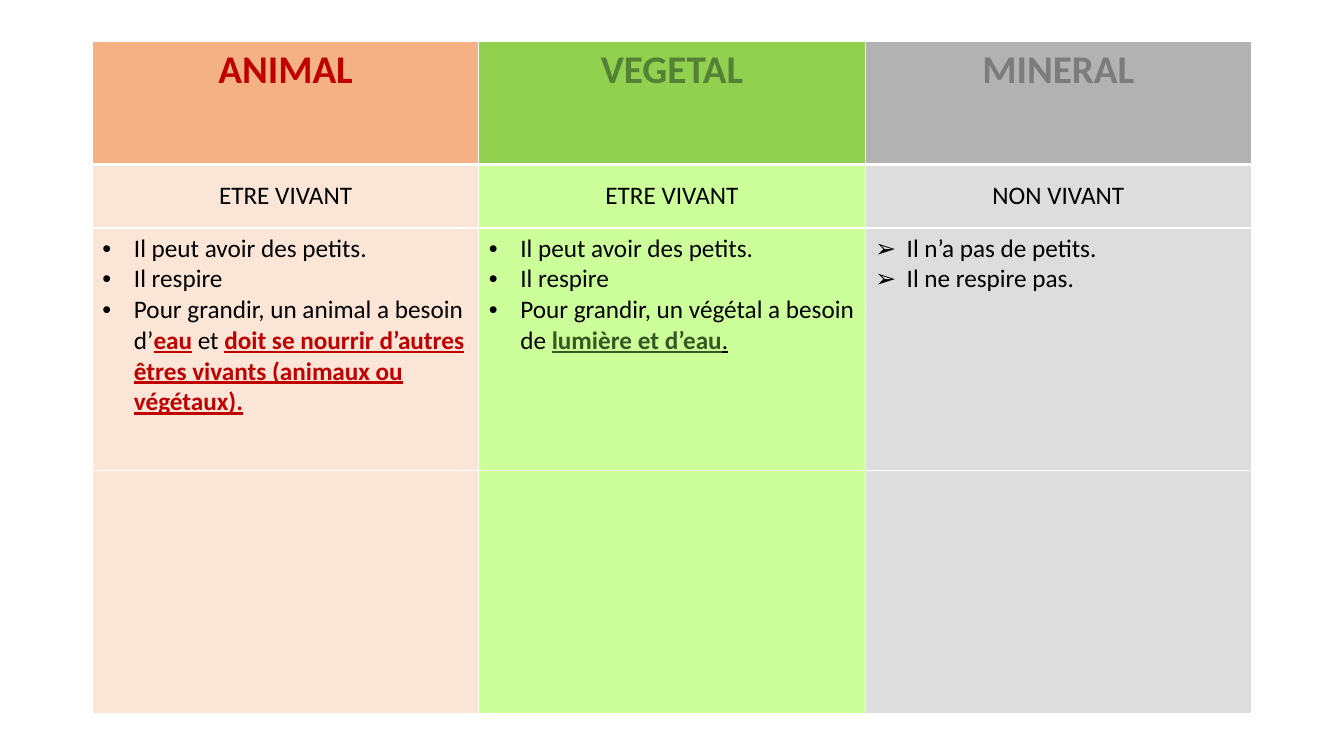
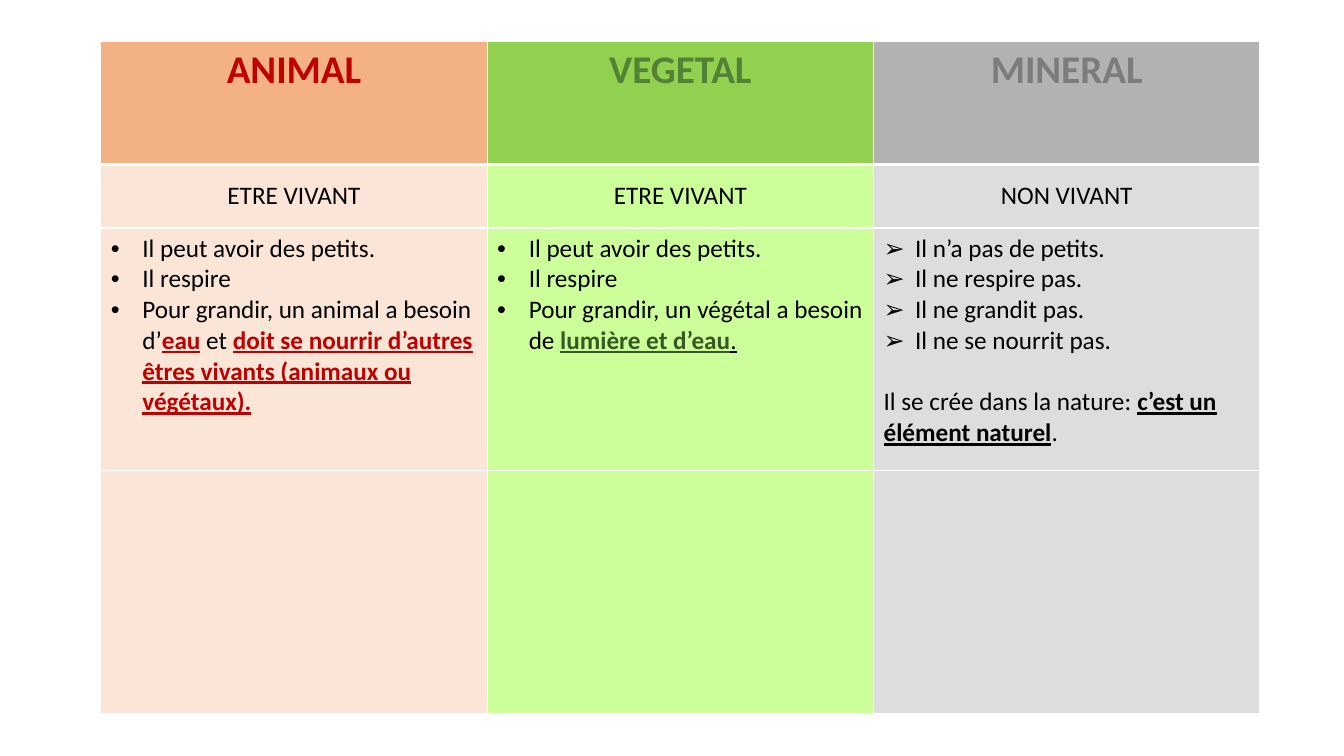
from lxml.etree import SubElement
from pptx import Presentation
from pptx.dml.color import RGBColor
from pptx.enum.text import MSO_ANCHOR, PP_ALIGN
from pptx.oxml import parse_xml
from pptx.oxml.ns import nsdecls, qn
from pptx.util import Pt

# Theme: colours, type sizes and run formats
THEME = {
    "font": "Calibri",
    "head_size": 28,
    "body_size": 18,
    "black": "000000",
    "border": "FFFFFF",
    "animal": {"title": "C00000", "head": "F4B183", "body": "FBE5D6"},
    "vegetal": {"title": "548235", "head": "92D050", "body": "CCFF99"},
    "mineral": {"title": "7C7C7C", "head": "B2B2B2", "body": "DDDDDD"},
    "plain": {"color": "000000"},
    "red_key": {"color": "C00000", "bold": True, "underline": True},
    "green_key": {"color": "385723", "bold": True, "underline": True},
    "black_key": {"color": "000000", "bold": True, "underline": True},
    "underlined": {"color": "000000", "underline": True},
}

# Table geometry in points
TOP, COL_WIDTH, INDENT = 29.7, 276, 22.5
ROW_HEIGHTS = [87.8, 45.4, 173.5, 173.5]
HEAD_LINE, THIN_LINE = 3, 1

# Content: each paragraph is a bullet and its runs (text, format)
LIVING = [("•", [("Il peut avoir des petits.", "plain")]),
          ("•", [("Il respire", "plain")])]
ANIMAL = LIVING + [("•", [
    ("Pour grandir, un animal a besoin d’", "plain"),
    ("eau", "red_key"),
    (" et ", "plain"),
    ("doit se nourrir d’autres êtres vivants (animaux ou végétaux).", "red_key")])]
VEGETAL = LIVING + [("•", [
    ("Pour grandir, un végétal a besoin de ", "plain"),
    ("lumière et d’eau", "green_key"),
    (".", "underlined")])]
MINERAL = [("➢", [("Il n’a pas de petits.", "plain")]),
           ("➢", [("Il ne respire pas.", "plain")])]
MINERAL_FULL = MINERAL + [
    ("➢", [("Il ne grandit pas.", "plain")]),
    ("➢", [("Il ne se nourrit pas.", "plain")]),
    (None, [("Il se crée dans la nature: ", "plain"),
            ("c’est un élément naturel", "black_key"),
            (".", "plain")])]
SLIDES = [(66, MINERAL), (72, MINERAL_FULL)]


def add_run(p, text, size, color, bold=False, underline=False):
    r = p.add_run()
    r.text = text
    values = {"name": THEME["font"], "size": Pt(size),
              "bold": bold, "underline": underline}
    for name, value in values.items():
        setattr(r.font, name, value)
    r.font.color.rgb = RGBColor.from_string(color)


def style_cell(cell, fill, row):
    cell.fill.solid()
    cell.fill.fore_color.rgb = RGBColor.from_string(fill)
    widths = {"lnL": THIN_LINE, "lnR": THIN_LINE,
              "lnT": HEAD_LINE if row == 1 else THIN_LINE,
              "lnB": HEAD_LINE if row == 0 else THIN_LINE}
    for i, (tag, width) in enumerate(widths.items()):
        cell._tc.get_or_add_tcPr().insert(i, parse_xml(
            f'<a:{tag} {nsdecls("a")} w="{Pt(width)}"><a:solidFill>'
            f'<a:srgbClr val="{THEME["border"]}"/></a:solidFill></a:{tag}>'))


prs = Presentation()
prs.slide_width, prs.slide_height = Pt(960), Pt(540)

for left, mineral in SLIDES:
    s = prs.slides.add_slide(prs.slide_layouts[6])
    columns = [("ANIMAL", "ETRE VIVANT", "animal", ANIMAL),
               ("VEGETAL", "ETRE VIVANT", "vegetal", VEGETAL),
               ("MINERAL", "NON VIVANT", "mineral", mineral)]

    # Table grid
    table = s.shapes.add_table(
        len(ROW_HEIGHTS), len(columns), Pt(left), Pt(TOP),
        Pt(COL_WIDTH * len(columns)), Pt(sum(ROW_HEIGHTS))).table
    for row, height in zip(table.rows, ROW_HEIGHTS):
        row.height = Pt(height)

    for c, (title, status, family, paragraphs) in enumerate(columns):
        table.columns[c].width = Pt(COL_WIDTH)
        colors = THEME[family]
        for row in range(len(ROW_HEIGHTS)):
            style_cell(table.cell(row, c), colors["body" if row else "head"], row)

        # Title and status rows
        p = table.cell(0, c).text_frame.paragraphs[0]
        p.alignment = PP_ALIGN.CENTER
        add_run(p, title, THEME["head_size"], colors["title"], bold=True)
        table.cell(1, c).vertical_anchor = MSO_ANCHOR.MIDDLE
        p = table.cell(1, c).text_frame.paragraphs[0]
        p.alignment = PP_ALIGN.CENTER
        add_run(p, status, THEME["body_size"], THEME["black"])

        # Characteristics
        tf = table.cell(2, c).text_frame
        for i, (bullet, runs) in enumerate(paragraphs):
            p = tf.add_paragraph() if i else tf.paragraphs[0]
            if bullet:
                pPr = p._p.get_or_add_pPr()
                pPr.set("marL", str(Pt(INDENT)))
                pPr.set("indent", str(-Pt(INDENT)))
                SubElement(pPr, qn("a:buFont"), typeface="Arial")
                SubElement(pPr, qn("a:buChar"), char=bullet)
            else:
                p.space_before = Pt(22)
            for text, style in runs:
                add_run(p, text, THEME["body_size"], **THEME[style])

prs.save("out.pptx")
